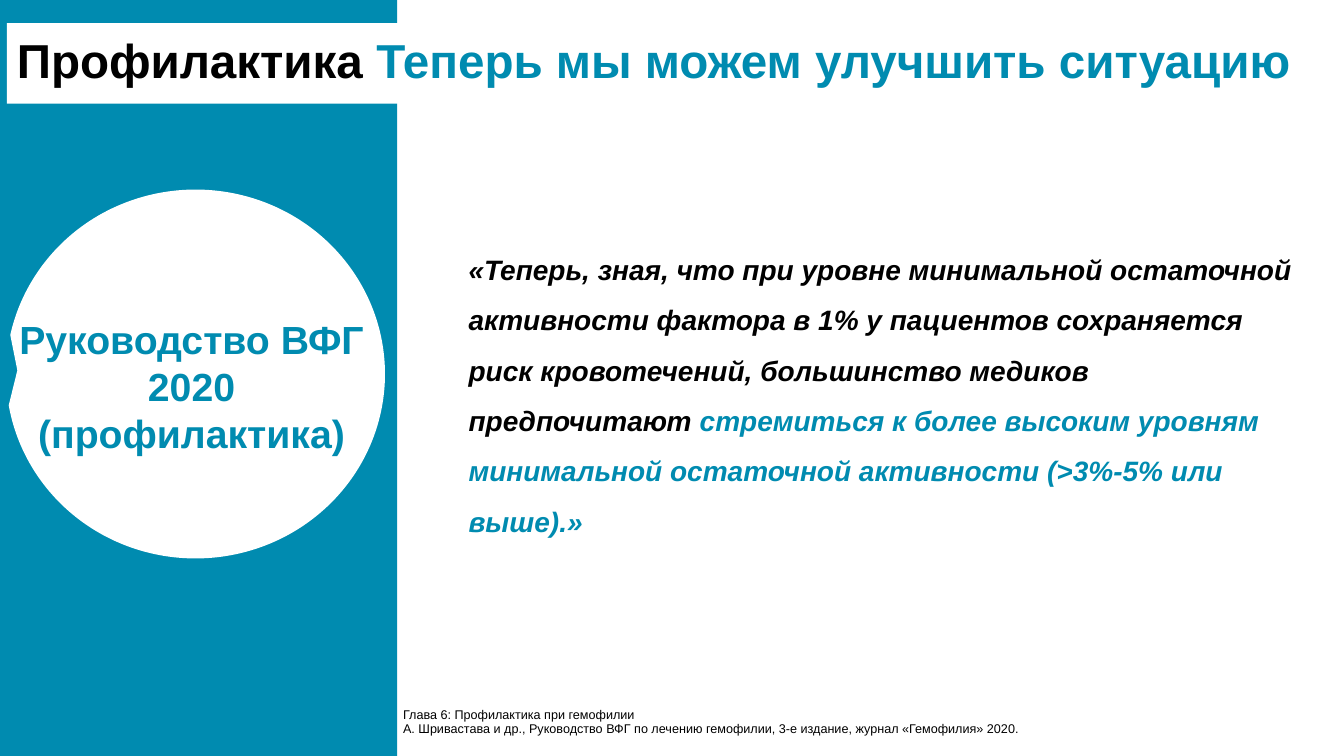
from pptx import Presentation
from pptx import util as u
from pptx.dml.color import RGBColor
from pptx.enum import shapes, text

TEAL = RGBColor(0x00, 0x8B, 0xB0)
BLACK = RGBColor(0x00, 0x00, 0x00)
WHITE = RGBColor(0xFF, 0xFF, 0xFF)
FONT = "Arial"
SHAPE = shapes.MSO_SHAPE
ANCHOR = text.MSO_ANCHOR
ALIGN = text.PP_ALIGN


def set_all(target, values):
    for name, value in values.items():
        setattr(target, name, value)


def add_block(page, kind, bounds, fill):
    block = page.shapes.add_shape(kind, *map(u.Pt, bounds))
    block.shadow.inherit = False
    block.fill.solid()
    block.fill.fore_color.rgb = fill
    block.line.fill.background()
    return block


def add_label(page, bounds):
    return page.shapes.add_textbox(*map(u.Pt, bounds))


def write(box, paragraphs, frame_format, para_format, font_format):
    """Fill a box; each paragraph is a list of (text, colour) spans, \\v breaks a line."""
    frame = box.text_frame
    set_all(frame, {"word_wrap": True, **frame_format})
    for index, spans in enumerate(paragraphs):
        para = frame.add_paragraph() if index else frame.paragraphs[0]
        set_all(para, para_format)
        for words, colour in spans:
            for number, line in enumerate(words.split("\v")):
                if number:
                    para.add_line_break()
                span = para.add_run()
                span.text = line
                set_all(span.font, {"name": FONT, **font_format})
                span.font.color.rgb = colour


def main():
    deck = Presentation()
    set_all(deck, {"slide_width": u.Pt(960), "slide_height": u.Pt(540)})
    page = deck.slides.add_slide(deck.slide_layouts[6])

    add_block(page, SHAPE.RECTANGLE, (0, 0, 283.7, 540), TEAL)

    title = add_block(page, SHAPE.RECTANGLE, (5, 16.5, 955, 57.6), WHITE)
    write(title,
          [[("Профилактика ", BLACK), ("Теперь мы можем улучшить ситуацию", TEAL)]],
          {"vertical_anchor": ANCHOR.MIDDLE},
          {"alignment": ALIGN.LEFT, "line_spacing": 0.9},
          {"size": u.Pt(34), "bold": True})

    quote = add_block(page, SHAPE.RECTANGLE, (327.6, 121.7, 617.8, 308.9), WHITE)
    write(quote,
          [[("«Теперь, зная, что при уровне минимальной остаточной активности фактора "
             "в 1% у пациентов сохраняется риск кровотечений, большинство медиков "
             "предпочитают ", BLACK),
            ("стремиться к более высоким уровням минимальной остаточной активности "
             "(>3%-5% или выше).»", TEAL)]],
          {"vertical_anchor": ANCHOR.MIDDLE},
          {"alignment": ALIGN.LEFT, "line_spacing": 1.5, "space_after": u.Pt(6)},
          {"size": u.Pt(20), "bold": True, "italic": True})

    callout = add_block(page, SHAPE.OVAL_CALLOUT, (4.3, 135.4, 270.7, 263.5), WHITE)
    callout.adjustments[0] = -0.47
    callout.adjustments[1] = -0.01

    source = add_label(page, (280.8, 499, 495.4, 26.6))
    write(source,
          [[("Глава 6: Профилактика при гемофилии \vА. Шривастава и др., Руководство ВФГ "
             "по лечению гемофилии, 3-е издание, журнал «Гемофилия» 2020.", BLACK)]],
          {"vertical_anchor": ANCHOR.BOTTOM, "margin_bottom": 0},
          {"line_spacing": 0.9},
          {"size": u.Pt(9)})

    guideline = add_label(page, (-0.7, 221.8, 275, 138.2))
    write(guideline,
          [[(line, TEAL)] for line in ("Руководство ВФГ", "2020", "(профилактика)")],
          {"auto_size": text.MSO_AUTO_SIZE.SHAPE_TO_FIT_TEXT},
          {"alignment": ALIGN.CENTER},
          {"size": u.Pt(28), "bold": True})

    deck.save("out.pptx")


if __name__ == "__main__":
    main()
